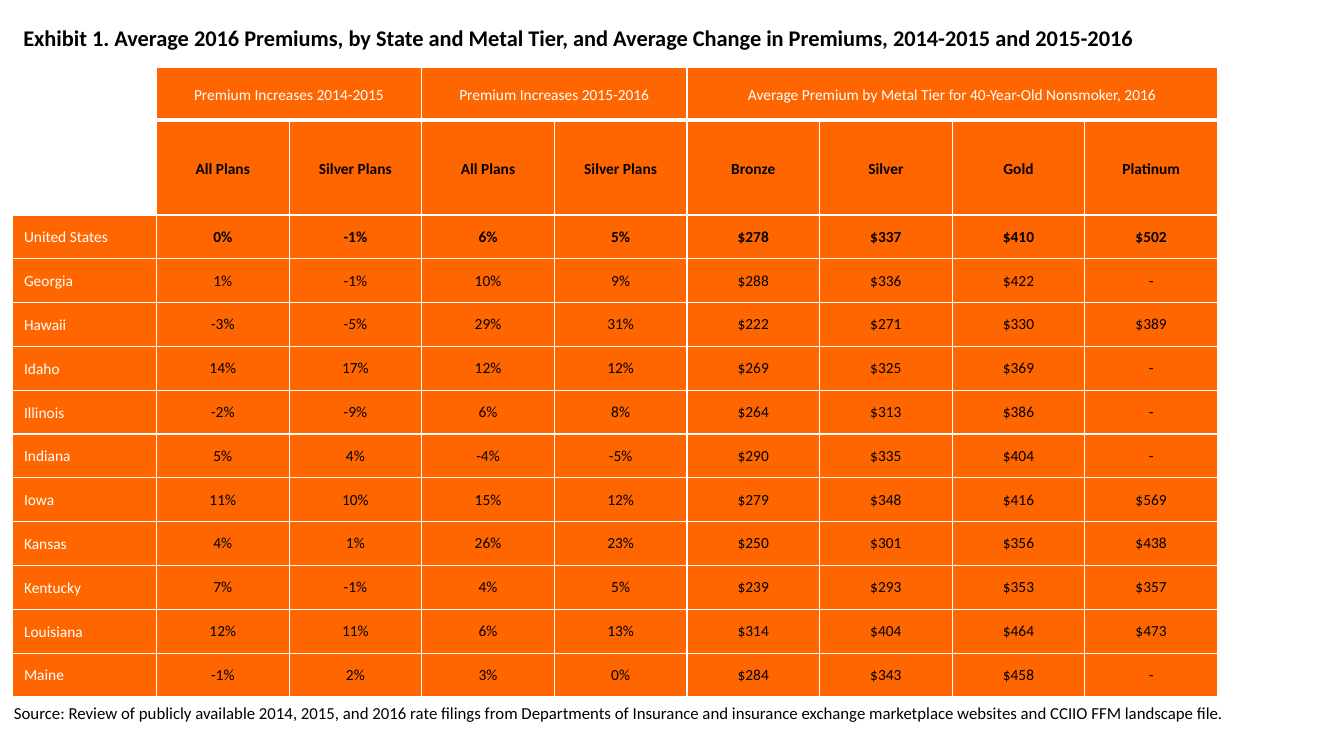
from lxml import etree
from pptx import Presentation
from pptx.dml.color import RGBColor
from pptx.enum import text as tx
from pptx.oxml import ns
from pptx.util import Pt

# Content
TITLE = ("Exhibit 1. Average 2016 Premiums, by State and Metal Tier, "
         "and Average Change in Premiums, 2014-2015 and 2015-2016")
SOURCE = ("Source: Review of publicly available 2014, 2015, and 2016 rate filings "
          "from Departments of Insurance and insurance exchange marketplace "
          "websites and CCIIO FFM landscape file.")
GROUPS = [  # heading, first column, columns spanned
    ("Premium Increases 2014-2015", 1, 2),
    ("Premium Increases 2015-2016", 3, 2),
    ("Average Premium by Metal Tier for 40-Year-Old Nonsmoker, 2016", 5, 4),
]
HEADS = ["All Plans", "Silver Plans", "All Plans", "Silver Plans",
         "Bronze", "Silver", "Gold", "Platinum"]
STATES = [
    ("United States", "0%", "-1%", "6%", "5%", "$278", "$337", "$410", "$502"),
    ("Georgia", "1%", "-1%", "10%", "9%", "$288", "$336", "$422", "-"),
    ("Hawaii", "-3%", "-5%", "29%", "31%", "$222", "$271", "$330", "$389"),
    ("Idaho", "14%", "17%", "12%", "12%", "$269", "$325", "$369", "-"),
    ("Illinois", "-2%", "-9%", "6%", "8%", "$264", "$313", "$386", "-"),
    ("Indiana", "5%", "4%", "-4%", "-5%", "$290", "$335", "$404", "-"),
    ("Iowa", "11%", "10%", "15%", "12%", "$279", "$348", "$416", "$569"),
    ("Kansas", "4%", "1%", "26%", "23%", "$250", "$301", "$356", "$438"),
    ("Kentucky", "7%", "-1%", "4%", "5%", "$239", "$293", "$353", "$357"),
    ("Louisiana", "12%", "11%", "6%", "13%", "$314", "$404", "$464", "$473"),
    ("Maine", "-1%", "2%", "3%", "0%", "$284", "$343", "$458", "-"),
]
HUES = {"main": "FF6600", "line": "FFFFFF", "light": "FFFFFF", "dark": "000000"}
FONT = "Calibri"

# Sizes in points
LEFT, TOP = 8.6, 48.5
WIDTHS = [103.2] + [94.75] * len(HEADS)
HEIGHTS = [37.3, 67.8] + [31.3] * len(STATES)
LEFT_AL, MID_AL = tx.PP_ALIGN.LEFT, tx.PP_ALIGN.CENTER


def write(frame, words, size, hue="dark", bold=False, align=LEFT_AL, space=None):
    para = frame.paragraphs[0]
    para.alignment = align
    if space:
        para.line_spacing = space
    run = para.add_run()
    run.text = words
    font = run.font
    font.name, font.size, font.bold = FONT, Pt(size), bold
    font.color.rgb = RGBColor.from_string(HUES[hue])


def edge(cell, base):
    """Draw the four white cell borders; base is the bottom width."""
    props = cell._tc.get_or_add_tcPr()
    for side, width in (("L", 1), ("R", 1), ("T", 1), ("B", base)):
        line = etree.SubElement(props, ns.qn("a:ln" + side), w=str(Pt(width)))
        fill = etree.SubElement(line, ns.qn("a:solidFill"))
        etree.SubElement(fill, ns.qn("a:srgbClr"), val=HUES["line"])


def paint(cell, share=100):
    """Fill with the main colour at the given percentage of opacity."""
    cell.fill.solid()
    cell.fill.fore_color.rgb = RGBColor.from_string(HUES["main"])
    if share < 100:
        tint = cell._tc.tcPr.find(".//" + ns.qn("a:srgbClr"))
        etree.SubElement(tint, ns.qn("a:alpha"), val=str(share * 1000))


def put(cell, words, share, side, **style):
    paint(cell, share)
    cell.vertical_anchor = tx.MSO_ANCHOR.MIDDLE
    cell.margin_left = cell.margin_right = Pt(side)
    cell.margin_top = cell.margin_bottom = 0
    write(cell.text_frame, words, 11, **style)


# Slide and title
deck = Presentation()
deck.slide_width, deck.slide_height = Pt(960), Pt(540)
slide = deck.slides.add_slide(deck.slide_layouts[5])
title = slide.shapes.title
title.left, title.top, title.width, title.height = Pt(9.4), Pt(15.8), Pt(941), Pt(24.5)
title.text_frame.vertical_anchor = tx.MSO_ANCHOR.MIDDLE
title.text_frame.auto_size = tx.MSO_AUTO_SIZE.NONE
write(title.text_frame, TITLE, 16, bold=True, space=0.9)

# Table grid
grid = slide.shapes.add_table(len(HEIGHTS), len(WIDTHS), Pt(LEFT), Pt(TOP),
                              Pt(sum(WIDTHS)), Pt(sum(HEIGHTS))).table
grid.first_row = grid.horz_banding = False
for col, width in zip(grid.columns, WIDTHS):
    col.width = Pt(width)
for row, height in zip(grid.rows, HEIGHTS):
    row.height = Pt(height)
for r in range(len(HEIGHTS)):
    for c in range(len(WIDTHS)):
        edge(grid.cell(r, c), 3 if r == 0 else 1)
for r in (0, 1):
    grid.cell(r, 0).fill.background()

# Headings
for words, first, span in GROUPS:
    cell = grid.cell(0, first)
    cell.merge(grid.cell(0, first + span - 1))
    put(cell, words, 100, 10.8, hue="light", align=MID_AL, space=1.15)
for c, words in enumerate(HEADS, 1):
    put(grid.cell(1, c), words, 60, 10.8, bold=True, align=MID_AL, space=1.15)

# State rows, with the national row in bold
for r, (state, *values) in enumerate(STATES, 2):
    put(grid.cell(r, 0), state, 100, 8.6, hue="light", space=1.07)
    for c, value in enumerate(values, 1):
        put(grid.cell(r, c), value, 20, 0.7, bold=r == 2, align=MID_AL)

# Source line
note = slide.shapes.add_textbox(Pt(2.9), Pt(498.2), Pt(941), Pt(36))
note.text_frame.word_wrap = True
write(note.text_frame, SOURCE, 12)

deck.save("out.pptx")
